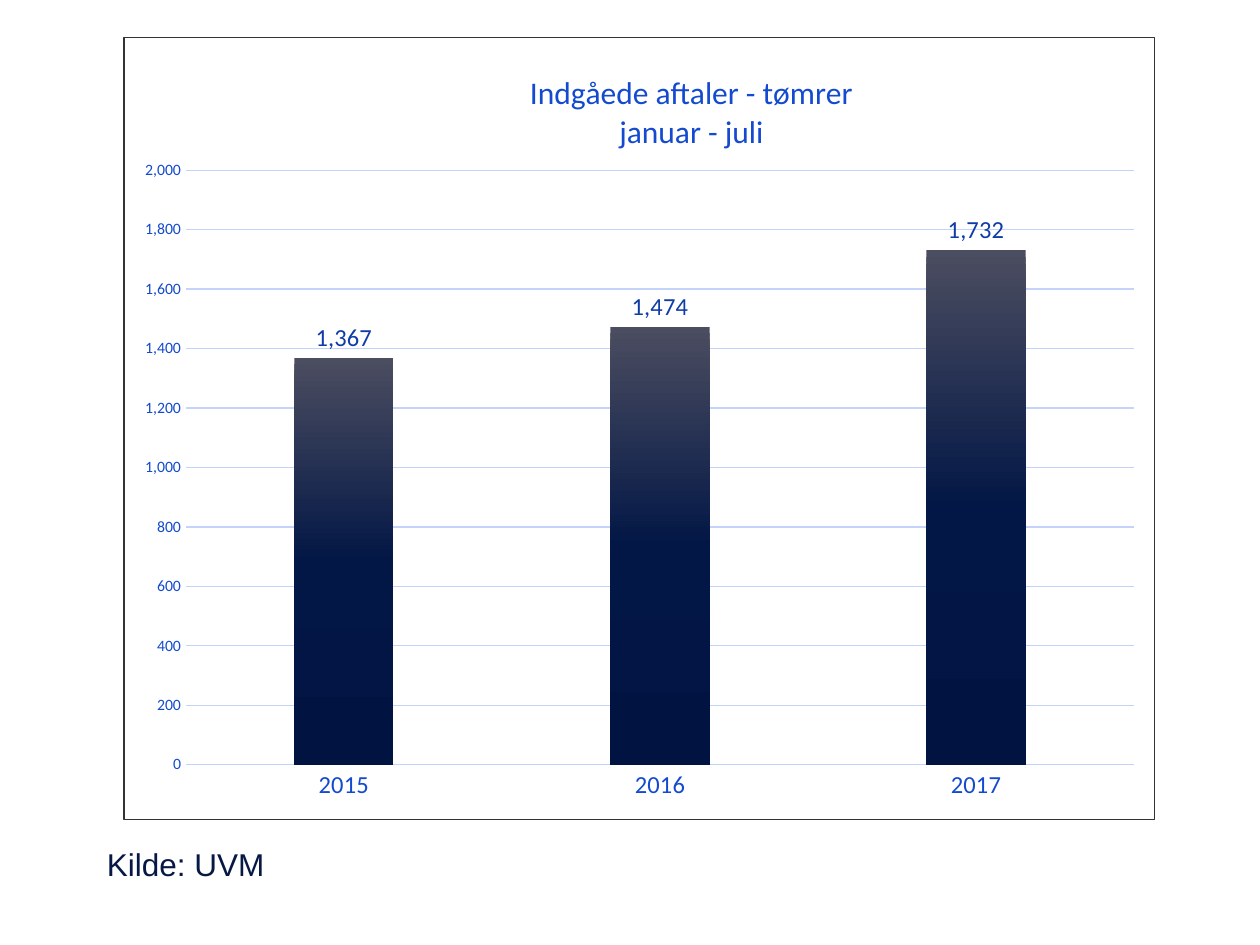
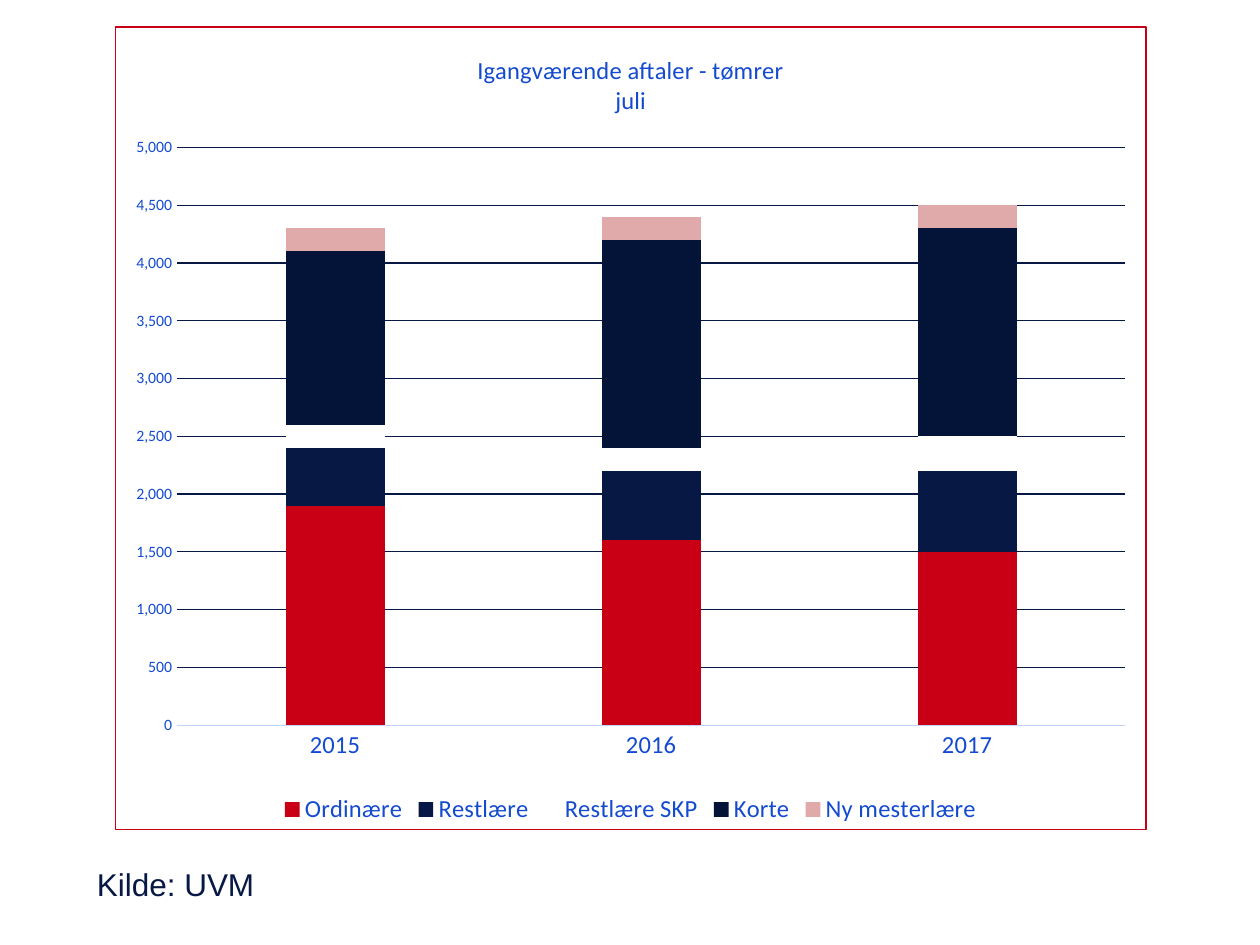
import pptx
import pptx.util
import pptx.oxml
import pptx.oxml.ns
import pptx.chart.data
import pptx.enum.chart
import pptx.enum.text
import pptx.dml.color
from pptx.dml.color import RGBColor
from pptx.util import Inches

NAVY = RGBColor(0x06, 0x18, 0x43)
DEEP_NAVY = RGBColor(0x04, 0x13, 0x38)
LABEL_BLUE = RGBColor(0x0F, 0x3C, 0xA7)
TEXT_BLUE = RGBColor(0x13, 0x4A, 0xCF)
PALE_BLUE = RGBColor(0xC3, 0xD3, 0xFA)
RED = RGBColor(0xC9, 0x00, 0x15)
ROSE = RGBColor(0xE1, 0xAA, 0xAA)
WHITE = RGBColor(0xFF, 0xFF, 0xFF)
CHARCOAL = RGBColor(0x33, 0x33, 0x33)
BAR_GRADIENT = [(0, "4B4D60"), (50, "031746"), (100, "001341")]

YEARS = ["2015", "2016", "2017"]
CHART_FONT = "Calibri"
TEXT_FONT = "Arial"
LINE_WIDTH = pptx.util.Pt(0.75)
NUMBER_FORMAT = "#,##0"
ChartType = pptx.enum.chart.XL_CHART_TYPE
qn = pptx.oxml.ns.qn


def xml(text):
    """Parse chart XML, declaring its namespaces on the first tag."""
    tag, rest = text.split(">", 1)
    declared = pptx.oxml.ns.nsdecls("c", "a")
    return pptx.oxml.parse_xml(f"{tag} {declared}>{rest}")


def manual_layout(**fractions):
    """Layout in fractions of the chart; w and h describe the inner plot."""
    target = '<c:layoutTarget val="inner"/>' if "w" in fractions else ""
    modes = '<c:xMode val="edge"/><c:yMode val="edge"/>'
    values = "".join(f'<c:{key} val="{value}"/>' for key, value in fractions.items())
    return xml(f"<c:layout><c:manualLayout>{target}{modes}{values}"
               "</c:manualLayout></c:layout>")


class ReportDeck:
    def __init__(self):
        self.deck = pptx.Presentation()
        self.deck.slide_width = Inches(10)
        self.deck.slide_height = Inches(7.5)
        self.page = None

    def add_page(self):
        self.page = self.deck.slides.add_slide(self.deck.slide_layouts[6])

    def style_font(self, font, size, color, name=CHART_FONT):
        font.name = name
        font.size = pptx.util.Pt(size)
        font.bold = False
        font.color.rgb = color

    def style_line(self, line, color):
        line.color.rgb = color
        line.width = LINE_WIDTH

    def add_source(self, left, top):
        box = self.page.shapes.add_textbox(
            Inches(left), Inches(top), Inches(5.35), Inches(0.4))
        frame = box.text_frame
        frame.word_wrap = True
        frame.auto_size = pptx.enum.text.MSO_AUTO_SIZE.SHAPE_TO_FIT_TEXT
        span = frame.paragraphs[0].add_run()
        span.text = "Kilde: UVM"
        self.style_font(span.font, 18, NAVY, TEXT_FONT)

    def add_chart(self, kind, series, left, top, height, border, overlap):
        data = pptx.chart.data.CategoryChartData(number_format=NUMBER_FORMAT)
        data.categories = YEARS
        for name, values in series:
            data.add_series(name, values)
        chart = self.page.shapes.add_chart(
            kind, Inches(left), Inches(top), Inches(8.19), Inches(height), data).chart
        self.style_font(chart.font, 10, NAVY)
        chart.has_legend = False
        plot = chart.plots[0]
        plot.vary_by_categories = False
        plot.gap_width = 219
        plot.overlap = overlap
        for bars in plot.series:
            bars.invert_if_negative = False
        # Frame around the whole chart
        frame = xml(f'<c:spPr><a:solidFill><a:srgbClr val="{WHITE}"/></a:solidFill>'
                    f'<a:ln w="{LINE_WIDTH}"><a:solidFill><a:srgbClr val="{border}"/>'
                    "</a:solidFill></a:ln></c:spPr>")
        chart._chartSpace.find(qn("c:chart")).addnext(frame)
        return chart

    def set_title(self, chart, lines, size, **position):
        title = chart.chart_title
        frame = title.text_frame
        for index, line in enumerate(lines):
            para = frame.add_paragraph() if index else frame.paragraphs[0]
            span = para.add_run()
            span.text = line
            self.style_font(span.font, size, TEXT_BLUE)
        title.include_in_layout = False
        if position:
            element = title._element
            for old in element.findall(qn("c:layout")):
                element.remove(old)
            element.find(qn("c:tx")).addnext(manual_layout(**position))

    def set_axes(self, chart, maximum, step, grid):
        no_tick = pptx.enum.chart.XL_TICK_MARK.NONE
        years, amounts = chart.category_axis, chart.value_axis
        for axis, size in ((years, 14), (amounts, 9)):
            axis.major_tick_mark = axis.minor_tick_mark = no_tick
            self.style_font(axis.tick_labels.font, size, TEXT_BLUE)
        self.style_line(years.format.line, PALE_BLUE)
        amounts.format.line.fill.background()
        amounts.minimum_scale = 0
        amounts.maximum_scale = maximum
        amounts.major_unit = step
        amounts.tick_labels.number_format = NUMBER_FORMAT
        amounts.tick_labels.number_format_is_linked = False
        self.style_line(amounts.major_gridlines.format.line, grid)

    def set_plot_area(self, chart, top, height):
        area = chart._chartSpace.find(".//" + qn("c:plotArea"))
        for old in area.findall(qn("c:layout")):
            area.remove(old)
        area.insert(0, manual_layout(x=0.06, y=top, w=0.92, h=height))

    def fill_gradient(self, bars, stops):
        bars.format.fill.solid()
        solid = bars._element.find(qn("c:spPr")).find(qn("a:solidFill"))
        marks = "".join(f'<a:gs pos="{place * 1000}"><a:srgbClr val="{color}"/></a:gs>'
                        for place, color in stops)
        gradient = xml(f"<a:gradFill><a:gsLst>{marks}</a:gsLst>"
                       '<a:lin ang="5400000" scaled="0"/></a:gradFill>')
        solid.getparent().replace(solid, gradient)

    def add_labels(self, bars):
        labels = bars.data_labels
        labels.show_value = True
        labels.position = pptx.enum.chart.XL_LABEL_POSITION.OUTSIDE_END
        self.style_font(labels.font, 14, LABEL_BLUE)

    def add_legend(self, chart):
        chart.has_legend = True
        chart.legend.position = pptx.enum.chart.XL_LEGEND_POSITION.BOTTOM
        chart.legend.include_in_layout = False
        self.style_font(chart.legend.font, 14, TEXT_BLUE)


def build_new_agreements(report):
    report.add_page()
    report.add_source(0.75, 6.66)
    chart = report.add_chart(
        ChartType.COLUMN_CLUSTERED, [("Series 1", (1367, 1474, 1732))],
        0.98, 0.29, 6.22, CHARCOAL, -27)
    report.set_title(chart, ["Indgåede aftaler - tømrer", "januar - juli"], 18,
                     x=0.39, y=0.04)
    report.set_axes(chart, 2000, 200, PALE_BLUE)
    report.set_plot_area(chart, 0.17, 0.76)
    bars = chart.plots[0].series[0]
    report.fill_gradient(bars, BAR_GRADIENT)
    report.add_labels(bars)


def build_running_agreements(report):
    agreements = [
        ("Ordinære", (1900, 1600, 1500), RED),
        ("Restlære", (500, 600, 700), NAVY),
        ("Restlære SKP", (200, 200, 300), WHITE),
        ("Korte", (1500, 1800, 1800), DEEP_NAVY),
        ("Ny mesterlære", (200, 200, 200), ROSE),
    ]
    report.add_page()
    report.add_source(0.67, 6.82)
    chart = report.add_chart(
        ChartType.COLUMN_STACKED, [(name, values) for name, values, _ in agreements],
        0.91, 0.21, 6.38, RED, 100)
    report.set_title(chart, ["Igangværende aftaler - tømrer", "juli"], 14)
    report.set_axes(chart, 5000, 500, NAVY)
    report.set_plot_area(chart, 0.15, 0.72)
    for bars, (_, _, color) in zip(chart.plots[0].series, agreements):
        bars.format.fill.solid()
        bars.format.fill.fore_color.rgb = color
    report.add_legend(chart)


def main():
    report = ReportDeck()
    build_new_agreements(report)
    build_running_agreements(report)
    report.deck.save("out.pptx")


if __name__ == "__main__":
    main()
